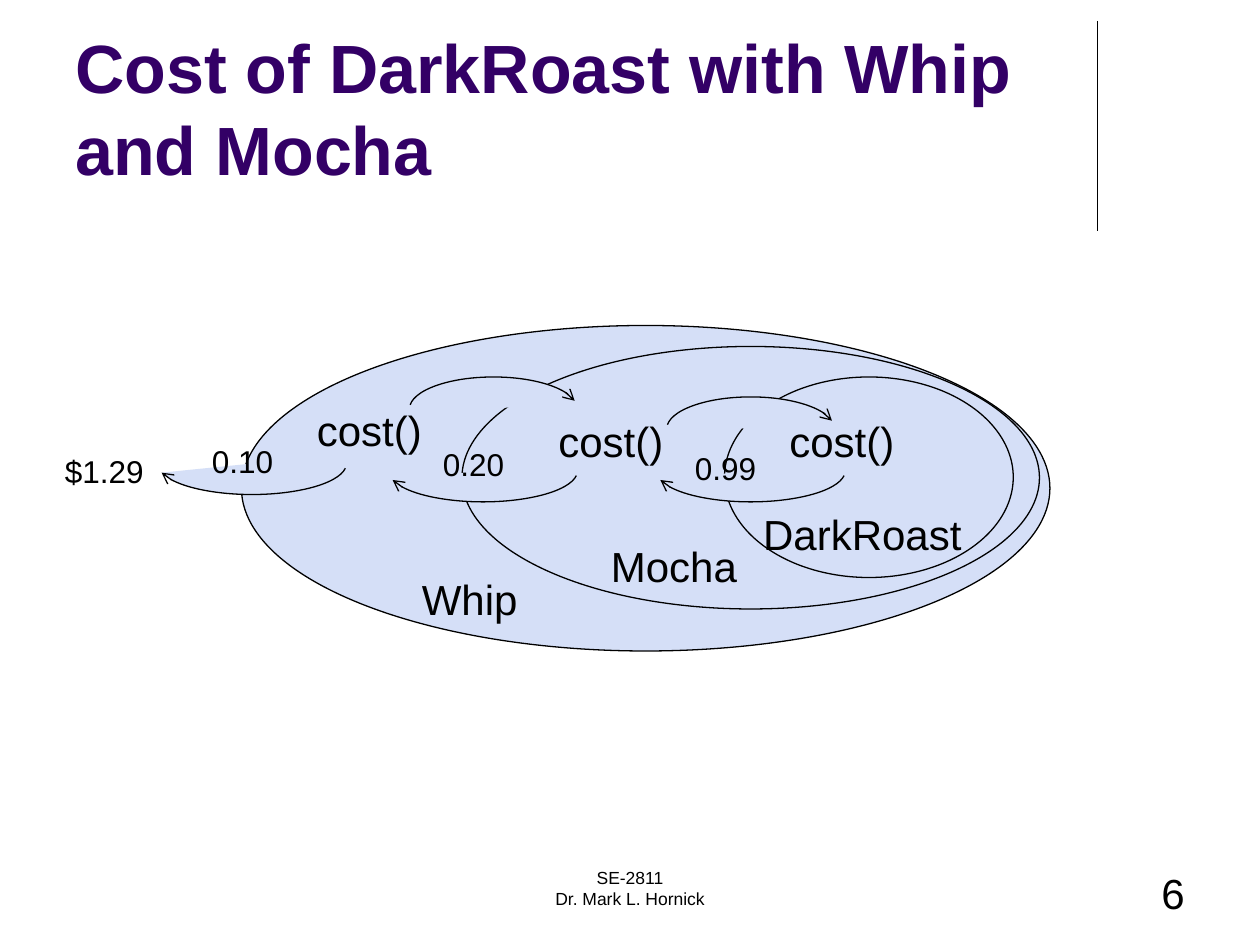
from pptx import Presentation
from pptx.dml.color import RGBColor
from pptx.enum.shapes import MSO_CONNECTOR as LINE, MSO_SHAPE as SHAPE
from pptx.enum.text import MSO_ANCHOR as ANCHOR, MSO_AUTO_SIZE as AUTO, PP_ALIGN as ALIGN
from pptx.oxml.ns import qn
from pptx.oxml.xmlchemy import OxmlElement as Element
from pptx.util import Inches, Pt

COLS, ROWS = 120, 90  # grid cells of 1/12 inch
INK, PLUM, SKY = "000000", "330066", "D5DFF7"


def color(code):
    return RGBColor.from_string(code)


def cell(*nums):
    return [Inches(n / 12) for n in nums]


def style(item, **values):
    for key, value in values.items():
        setattr(item, key, value)


def outline(item):
    item.line.color.rgb = color(INK)
    item.line.width = Pt(0.75)


def write(slide, box, lines, size, ink=INK, bold=False, align=ALIGN.LEFT, **frame):
    text = slide.shapes.add_textbox(*cell(*box)).text_frame
    style(text, word_wrap=True, **frame)
    for i, line in enumerate(lines):
        par = text.add_paragraph() if i else text.paragraphs[0]
        par.alignment = align
        run = par.add_run()
        run.text = line
        style(run.font, name="Arial", size=Pt(size), bold=bold)
        run.font.color.rgb = color(ink)


def draw(slide, kind, box):
    shape = slide.shapes.add_shape(kind, *cell(*box))
    shape.shadow.inherit = False
    shape.fill.solid()
    shape.fill.fore_color.rgb = color(SKY)
    outline(shape)
    return shape


def arrow(slide, box, back):
    """Arched arrow: over the top to the right, or back underneath."""
    arc = draw(slide, SHAPE.ARC, box)
    arc.adjustments[0], arc.adjustments[1] = 109.741, 212.544
    tip = Element("a:tailEnd")
    tip.set("type", "arrow")
    arc.line._get_or_add_ln().append(tip)
    if back:
        xfrm = arc._element.spPr.find(qn("a:xfrm"))
        for flip in ("flipH", "flipV"):
            xfrm.set(flip, "1")


def header(slide, box):
    x, y, w, h = box
    write(slide, (x, y - 0.4, w, h - 3), ["Cost of DarkRoast with Whip and Mocha"],
          39, PLUM, True, vertical_anchor=ANCHOR.BOTTOM)
    rule = slide.shapes.add_connector(
        LINE.STRAIGHT, *cell(x + w - 0.5, y, x + w - 0.5, y + h))
    outline(rule)
    rule._element.spPr.append(Element("a:effectLst"))


def diagram(slide, box):
    left, top = box[:2]

    def at(x, y, w, h):
        return left + x, top + y, w, h

    def label(text, x, y, w, h, size):
        write(slide, at(x, y, w, h), [text], size, auto_size=AUTO.SHAPE_TO_FIT_TEXT)

    for oval in ((18, 0, 77, 31), (39, 2, 55, 25), (64, 4.9, 27.5, 19.1)):
        draw(slide, SHAPE.OVAL, at(*oval))
    for text, x, y in (("Whip", 34, 23), ("Mocha", 52, 19.9), ("DarkRoast", 66.5, 16.8),
                       ("cost()", 69, 8), ("cost()", 47, 8), ("cost()", 24, 6.9)):
        label(text, x, y, 36, 6, 24)
    for x, y in ((34, 4.9), (58.5, 6.8)):
        arrow(slide, at(x, y, 16, 6.1), False)
    for x, y in ((57.5, 10.9), (32, 10.9), (10, 10.2)):
        arrow(slide, at(x, y, 18, 5.9), True)
    for text, x, y in (("0.99", 60, 11.2), ("0.20", 36, 10.8),
                       ("0.10", 14, 10.5), ("$1.29", 0, 11.5)):
        label(text, x, y, 12, 4.8, 18)


def footer(slide, box):
    x, y, w, h = box
    write(slide, (x, y, 38, h), ["SE-2811", "Dr. Mark L. Hornick"], 10, align=ALIGN.CENTER)
    write(slide, (x + w - 28, y, 28, h), ["6"], 24, align=ALIGN.RIGHT)


def main():
    deck = Presentation()
    deck.slide_width, deck.slide_height = cell(COLS, ROWS)
    slide = deck.slides.add_slide(deck.slide_layouts[6])
    header(slide, (6, 2, 99, 20))
    footer(slide, (41, 82, 73, 6))
    diagram(slide, (5, 31, 95, 31))
    deck.save("out.pptx")


if __name__ == "__main__":
    main()
